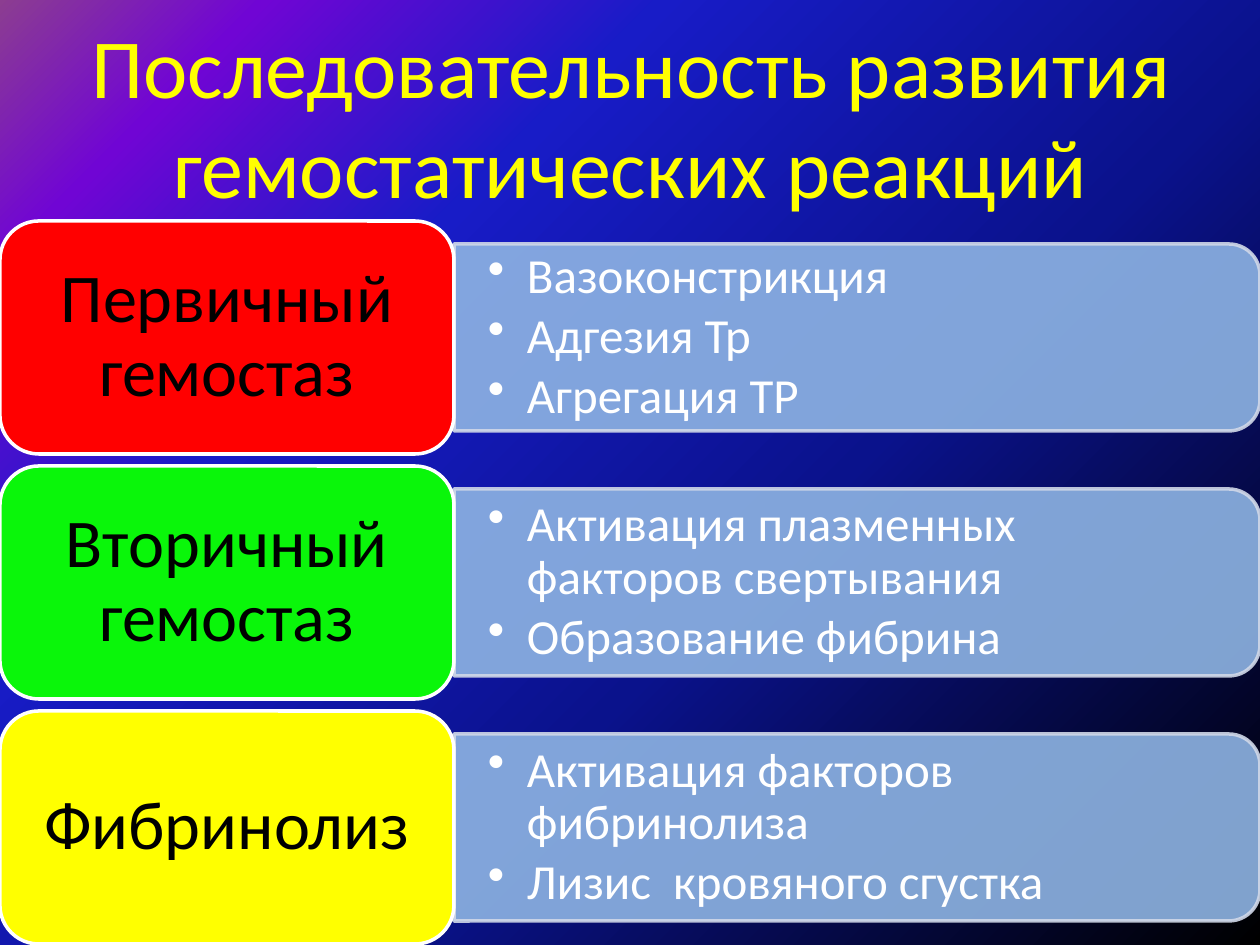
"""Build the slide on the sequence of haemostatic reactions."""
import pptx
import pptx.util
import pptx.dml.color
import pptx.enum.shapes
import pptx.enum.text
import pptx.oxml
import pptx.oxml.ns
import lxml.etree

SHAPE = pptx.enum.shapes.MSO_SHAPE
ALIGN = pptx.enum.text.PP_ALIGN
MIDDLE = pptx.enum.text.MSO_ANCHOR.MIDDLE
qn = pptx.oxml.ns.qn


def px(n):
    return round(n * 914400 / 126)


def paint(color_format, color, alpha=None):
    color_format.rgb = pptx.dml.color.RGBColor.from_string(color)


prs = pptx.Presentation()
prs.slide_width, prs.slide_height = px(1260), px(945)
s = prs.slides.add_slide(prs.slide_layouts[5])

stops = [(0, "000000"), (40, "0A128C"), (70, "181CC7"), (88, "7005D4"), (100, "8C3D91")]
gs = "".join(f'<a:gs pos="{pos * 1000}"><a:srgbClr val="{color}"/></a:gs>' for pos, color in stops)
s.element.cSld.insert(0, pptx.oxml.parse_xml(
    f'<p:bg {pptx.oxml.ns.nsdecls("p", "a")}><p:bgPr><a:gradFill rotWithShape="1">'
    f'<a:gsLst>{gs}</a:gsLst><a:path path="circle">'
    '<a:fillToRect l="100000" t="100000"/></a:path></a:gradFill>'
    '<a:effectLst/></p:bgPr></p:bg>'))

title = s.shapes.title
title.left, title.top, title.width, title.height = px(64), px(36), px(1134), px(158)
tf = title.text_frame
tf.auto_size = pptx.enum.text.MSO_AUTO_SIZE.NONE
tf.vertical_anchor = MIDDLE
p = tf.paragraphs[0]
p.alignment = ALIGN.CENTER
r = p.add_run()
r.text = "Последовательность развития гемостатических реакций"
r.font.size, r.font.name = pptx.util.Pt(48), "Calibri"
paint(r.font.color, "FFFF00")

stages = [
    ("Первичный гемостаз", "FF0000", ["Вазоконстрикция", "Адгезия Тр", "Агрегация ТР"]),
    ("Вторичный гемостаз", "0AF60A",
     ["Активация плазменных факторов свертывания", "Образование фибрина"]),
    ("Фибринолиз", "FFFF00", ["Активация факторов фибринолиза", "Лизис  кровяного сгустка"]),
]
label_w, label_h, pitch = 454, 233, 245
bar_w, bar_h = 1260 - label_w, 187

for i, (name, color, points) in enumerate(stages):
    top = 221 + i * pitch
    mid_x, mid_y = label_w + bar_w / 2, top + label_h / 2

    bar = s.shapes.add_shape(SHAPE.ROUND_2_SAME_RECTANGLE, px(mid_x - bar_h / 2),
                             px(mid_y - bar_w / 2), px(bar_h), px(bar_w))
    bar.rotation = 90
    label = s.shapes.add_shape(SHAPE.ROUNDED_RECTANGLE, 0, px(top), px(label_w), px(label_h))
    for sp, fill, line in ((bar, "8EB4E3", "D0D8E8"), (label, color, "FFFFFF")):
        sp.shadow.inherit = False
        sp.fill.solid()
        paint(sp.fill.fore_color, fill)
        paint(sp.line.color, line)
        sp.line.width = pptx.util.Pt(2)
    for clr in bar.element.spPr.iter(qn("a:srgbClr")):
        lxml.etree.SubElement(clr, qn("a:alpha"), val="90000")

    box = s.shapes.add_textbox(px(label_w), px(mid_y - 84), px(798), px(168))
    for sp, lines, size, ink, inset in ((label, [name], 39, "000000", 20),
                                        (box, points, 28, "FFFFFF", 34)):
        tf = sp.text_frame
        tf.word_wrap = True
        tf.vertical_anchor = MIDDLE
        tf.margin_left = tf.margin_right = px(inset)
        tf.margin_top = tf.margin_bottom = px(inset // 2)
        for n, text in enumerate(lines):
            p = tf.add_paragraph() if n else tf.paragraphs[0]
            p.line_spacing = 0.9
            r = p.add_run()
            r.text = text
            r.font.size, r.font.name = pptx.util.Pt(size), "Calibri"
            paint(r.font.color, ink)
            if sp is label:
                p.alignment = ALIGN.CENTER
            else:
                p.level = 1
                p.alignment = ALIGN.LEFT
                p.space_after = pptx.util.Pt(4)
                pPr = p._p.get_or_add_pPr()
                pPr.set("marL", str(px(39)))
                pPr.set("indent", str(-px(39)))
                lxml.etree.SubElement(pPr, qn("a:buChar"), char="•")

prs.save("out.pptx")
